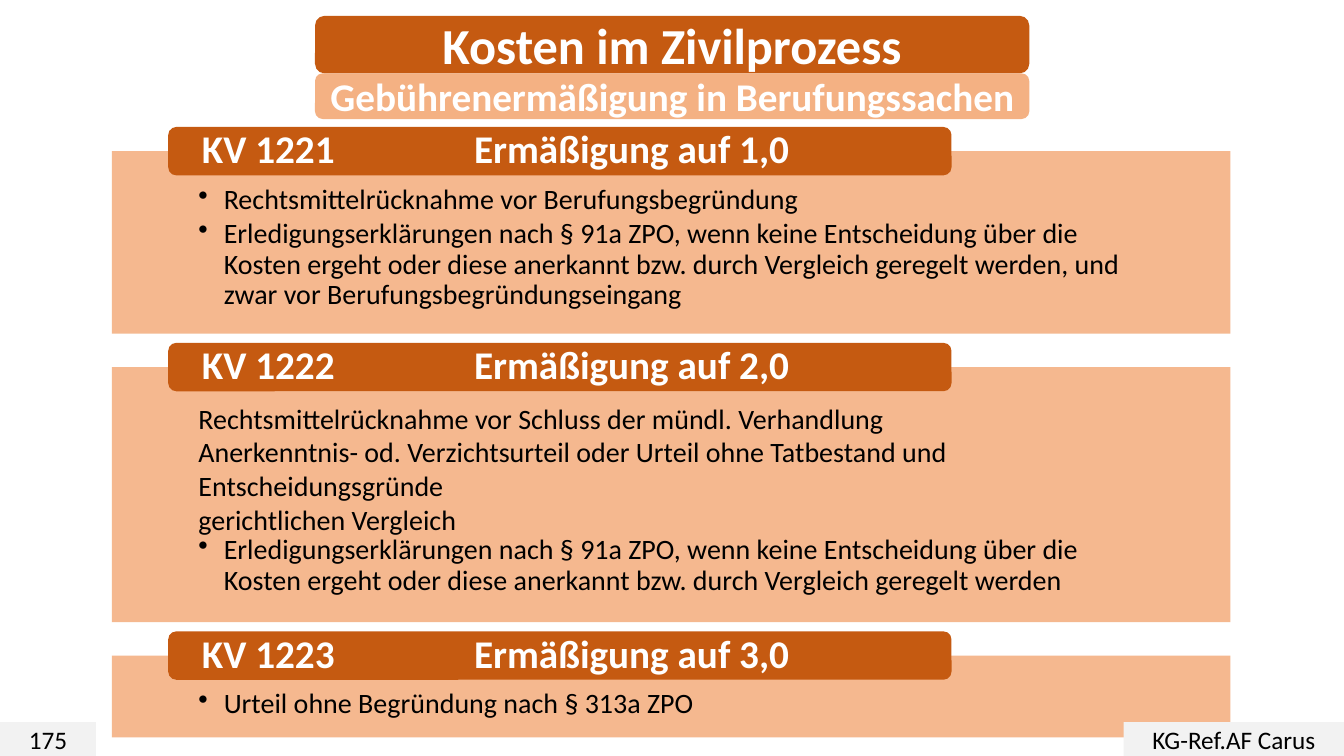
"""Builds the slide on reduced court fees in appeal cases."""
from lxml.etree import SubElement
from pptx import Presentation
from pptx.dml.color import RGBColor
from pptx.enum.shapes import MSO_SHAPE
from pptx.enum.text import MSO_ANCHOR, PP_ALIGN
from pptx.oxml.ns import qn
from pptx.util import Cm, Pt

COLORS = {
    "dark": "C55A11",
    "light": "F4B183",
    "footer": "F2F2F2",
    "white": "FFFFFF",
    "black": "000000",
}
FONT = "Calibri"
PANEL_GAP = 0.84
SECTIONS = [
    ("KV 1221\tErmäßigung auf 1,0", 4.6, [], [
        "Rechtsmittelrücknahme vor Berufungsbegründung",
        "Erledigungserklärungen nach § 91a ZPO, wenn keine Entscheidung über die "
        "Kosten ergeht oder diese anerkannt bzw. durch Vergleich geregelt werden, "
        "und zwar vor Berufungsbegründungseingang",
    ]),
    ("KV 1222\tErmäßigung auf 2,0", 6.43, [
        "Rechtsmittelrücknahme vor Schluss der mündl. Verhandlung",
        "Anerkenntnis- od. Verzichtsurteil oder Urteil ohne Tatbestand und "
        "Entscheidungsgründe",
        "gerichtlichen Vergleich",
    ], [
        "Erledigungserklärungen nach § 91a ZPO, wenn keine Entscheidung über die "
        "Kosten ergeht oder diese anerkannt bzw. durch Vergleich geregelt werden",
    ]),
    ("KV 1223\tErmäßigung auf 3,0", 2.06, [], [
        "Urteil ohne Begründung nach § 313a ZPO",
    ]),
]


def add_box(page, kind, place, fill):
    """Add a borderless filled shape at the given place in centimetres."""
    box = page.shapes.add_shape(kind, *map(Cm, place))
    box.shadow.inherit = False
    box.fill.solid()
    box.fill.fore_color.rgb = RGBColor.from_string(COLORS[fill])
    box.line.fill.background()
    box.text_frame.word_wrap = True
    return box


def set_margins(frame, side, top, bottom):
    """Set the inner margins of a text frame in centimetres."""
    frame.margin_left = frame.margin_right = Cm(side)
    frame.margin_top = Cm(top)
    frame.margin_bottom = Cm(bottom)


def style_paragraph(paragraph, size, color, bold=False, align=PP_ALIGN.LEFT):
    """Set alignment and font of a paragraph."""
    paragraph.alignment = align
    font = paragraph.font
    font.name = FONT
    font.size = Pt(size)
    font.bold = bold
    font.color.rgb = RGBColor.from_string(COLORS[color])


def add_label(page, kind, place, fill, text, size, color, bold=False):
    """Add a shape with one centred line of text."""
    frame = add_box(page, kind, place, fill).text_frame
    frame.vertical_anchor = MSO_ANCHOR.MIDDLE
    frame.text = text
    style_paragraph(frame.paragraphs[0], size, color, bold, PP_ALIGN.CENTER)


def make_bullet(paragraph):
    """Turn a paragraph into a tightly set bullet point."""
    paragraph.line_spacing = 0.9
    paragraph.space_after = Pt(3)
    properties = paragraph._p.get_or_add_pPr()
    properties.set("marL", str(Cm(0.64)))
    properties.set("indent", str(Cm(-0.64)))
    SubElement(properties, qn("a:buChar"), char="•")


def add_panel(page, top, height, plain_lines, bullets):
    """Add a translucent panel with plain lines followed by bullets."""
    panel = add_box(page, MSO_SHAPE.RECTANGLE, (2.82, top, 28.19, height), "light")
    color = panel.fill._xPr.find(".//" + qn("a:srgbClr"))
    SubElement(color, qn("a:alpha"), val="90000")
    frame = panel.text_frame
    frame.vertical_anchor = MSO_ANCHOR.TOP
    set_margins(frame, 2.18, 0.86, 0.41)
    lines = plain_lines + bullets
    frame.text = "\n".join(lines)
    for index, paragraph in enumerate(frame.paragraphs):
        if index >= len(plain_lines):
            make_bullet(paragraph)
        style_paragraph(paragraph, 20, "black")


def add_heading(page, top, text):
    """Add the rounded heading that overlaps the top of a panel."""
    place = (4.24, top - 0.61, 19.74, 1.22)
    frame = add_box(page, MSO_SHAPE.ROUNDED_RECTANGLE, place, "dark").text_frame
    frame.vertical_anchor = MSO_ANCHOR.MIDDLE
    set_margins(frame, 0.79, 0, 0)
    frame.text = text
    paragraph = frame.paragraphs[0]
    paragraph.line_spacing = 0.9
    tabs = SubElement(paragraph._p.get_or_add_pPr(), qn("a:tabLst"))
    SubElement(tabs, qn("a:tab"), pos=str(Cm(6.86)), algn="l")
    style_paragraph(paragraph, 28, "white", bold=True)


def main():
    """Build and save the deck."""
    deck = Presentation()
    deck.slide_width, deck.slide_height = Cm(33.87), Cm(19.05)
    page = deck.slides.add_slide(deck.slide_layouts[6])
    rounded, rectangle = MSO_SHAPE.ROUNDED_RECTANGLE, MSO_SHAPE.RECTANGLE
    add_label(page, rectangle, (0, 18.2, 2.42, 0.85), "footer", "175", 18, "black")
    add_label(page, rounded, (7.94, 0.4, 18, 1.45), "dark",
              "Kosten im Zivilprozess", 36, "white", bold=True)
    top = 3.81
    for heading, height, plain_lines, bullets in SECTIONS:
        add_panel(page, top, height, plain_lines, bullets)
        add_heading(page, top, heading)
        top += height + PANEL_GAP
    add_label(page, rectangle, (28.32, 18.2, 5.55, 0.85), "footer",
              "KG-Ref.AF Carus", 18, "black")
    add_label(page, rounded, (7.94, 1.85, 18, 1.15), "light",
              "Gebührenermäßigung in Berufungssachen", 28, "white", bold=True)
    deck.save("out.pptx")


if __name__ == "__main__":
    main()
